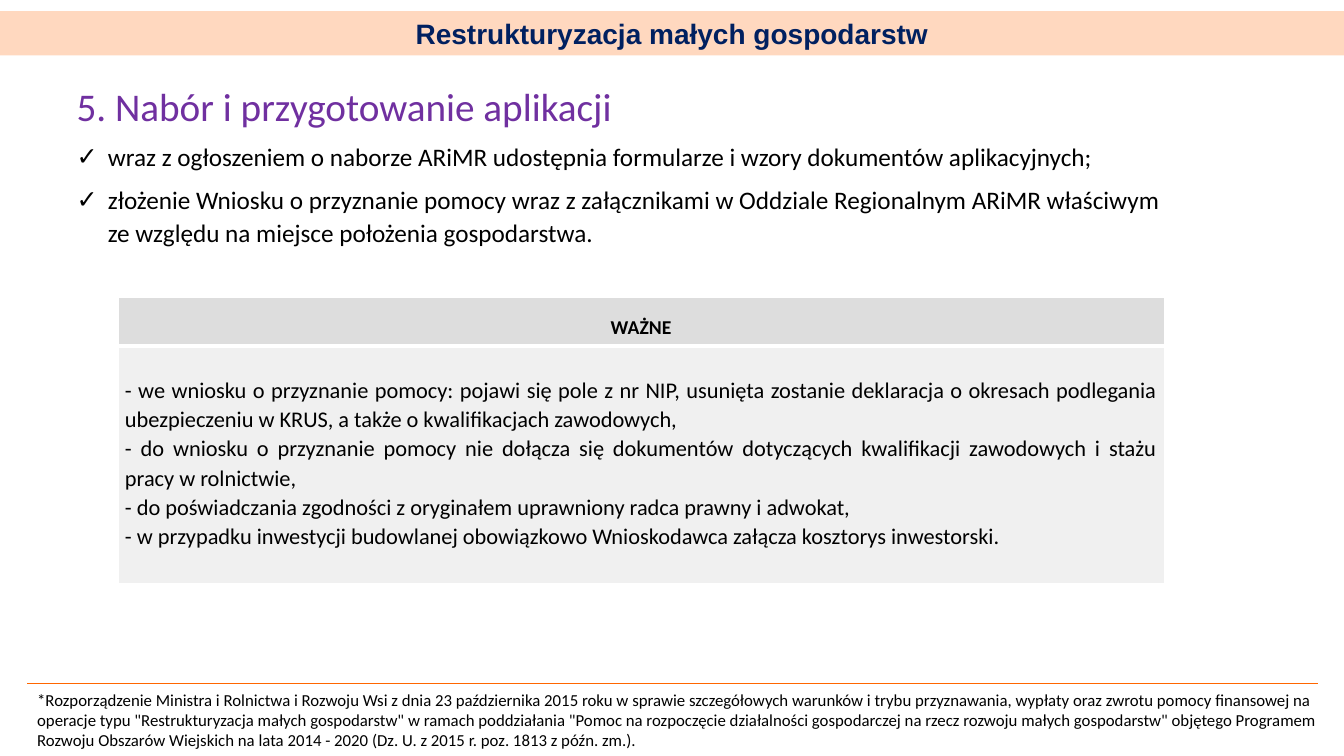
from dataclasses import dataclass

import lxml.etree
import pptx
import pptx.dml.color
import pptx.enum.shapes
import pptx.enum.text
import pptx.oxml.ns
import pptx.util

RGBColor = pptx.dml.color.RGBColor
ALIGN = pptx.enum.text.PP_ALIGN
ANCHOR = pptx.enum.text.MSO_ANCHOR
AUTO_SIZE = pptx.enum.text.MSO_AUTO_SIZE
Pt = pptx.util.Pt

BLACK = RGBColor(0x00, 0x00, 0x00)
WHITE = RGBColor(0xFF, 0xFF, 0xFF)
NAVY = RGBColor(0x00, 0x20, 0x60)
PURPLE = RGBColor(0x70, 0x30, 0xA0)
ORANGE = RGBColor(0xFF, 0x66, 0x00)
HEADER_GREY = RGBColor(0xDD, 0xDD, 0xDD)
BODY_GREY = RGBColor(0xF0, 0xF0, 0xF0)

# The slide is a grid of square cells, twelve to the inch.
CELL = pptx.util.Inches(1) / 12
COLUMNS, ROWS = 160, 90
BULLET_INDENT = 3.72


@dataclass(frozen=True)
class Area:
    """A rectangle in grid columns and rows."""
    left: float
    top: float
    width: float
    height: float

    def emu(self) -> tuple:
        return tuple(grid(n) for n in (self.left, self.top, self.width, self.height))


@dataclass(frozen=True)
class TextStyle:
    size: float
    color: RGBColor = BLACK
    font: str = "Calibri"
    bold: bool = False
    align: ALIGN = ALIGN.LEFT
    line_spacing: float = 1.0
    space_after: float = 0


@dataclass(frozen=True)
class NoteRow:
    """One row of the note table; borders are left, right, top, bottom in points."""
    height: float
    fill: RGBColor
    style: TextStyle
    anchor: ANCHOR
    margin_top: float
    borders: tuple
    texts: tuple


BANNER = Area(0, 1.32, COLUMNS, 5.28)
HEADING = Area(7.92, 8.76, 66.84, 6.96)
STEPS = Area(7.92, 15.96, 132.48, 14.28)
NOTE = Area(14.04, 35.4, 124.56, 34.08)
FOOTNOTE = Area(3.24, 81.48, COLUMNS - 3.24, 8.52)
RULE_LEFT, RULE_RIGHT, RULE_ROW = 3.24, 156.96, 81.36

BANNER_STYLE = TextStyle(20, NAVY, "Arial", True, ALIGN.CENTER)
HEADING_STYLE = TextStyle(28, PURPLE, line_spacing=1.07, space_after=8)
STEP_STYLE = TextStyle(18, line_spacing=1.07, space_after=8)
FOOTNOTE_STYLE = TextStyle(12)

STEP_TEXTS = (
    "wraz z ogłoszeniem o naborze ARiMR udostępnia formularze i wzory dokumentów aplikacyjnych;",
    "złożenie Wniosku o przyznanie pomocy wraz z załącznikami w Oddziale Regionalnym ARiMR "
    "właściwym ze względu na miejsce położenia gospodarstwa.",
)
NOTE_ROWS = (
    NoteRow(5.76, HEADER_GREY, TextStyle(14, bold=True, align=ALIGN.CENTER, line_spacing=1.5),
            ANCHOR.MIDDLE, 0, (1, 1, 1, 3), ("WAŻNE",)),
    NoteRow(28.32, BODY_GREY, TextStyle(16, align=ALIGN.JUSTIFY, line_spacing=1.07),
            ANCHOR.TOP, 3.48, (1, 1, 3, 1), (
                "- we wniosku o przyznanie pomocy: pojawi się pole z nr NIP, usunięta zostanie "
                "deklaracja o okresach podlegania ubezpieczeniu w KRUS, a także o kwalifikacjach "
                "zawodowych,",
                "- do wniosku o przyznanie pomocy nie dołącza się dokumentów dotyczących "
                "kwalifikacji zawodowych i stażu pracy w rolnictwie,",
                "- do poświadczania zgodności z oryginałem uprawniony radca prawny i adwokat,",
                "- w przypadku inwestycji budowlanej obowiązkowo Wnioskodawca załącza kosztorys "
                "inwestorski.",
            )),
)
FOOTNOTE_TEXT = (
    "*Rozporządzenie Ministra i Rolnictwa i Rozwoju Wsi z dnia 23 października 2015 roku w sprawie "
    "szczegółowych warunków i trybu przyznawania, wypłaty oraz zwrotu pomocy finansowej na operacje "
    'typu "Restrukturyzacja małych gospodarstw" w ramach poddziałania "Pomoc na rozpoczęcie '
    'działalności gospodarczej na rzecz rozwoju małych gospodarstw" objętego Programem Rozwoju '
    "Obszarów Wiejskich na lata 2014 - 2020 (Dz. U. z 2015 r. poz. 1813 z późn. zm.)."
)


def grid(count: float) -> int:
    return round(count * CELL)


def add_element(parent, tag: str, **attributes: str):
    return lxml.etree.SubElement(parent, pptx.oxml.ns.qn(tag), attributes)


def add_check_bullet(para) -> None:
    properties = para._p.get_or_add_pPr()
    properties.set("marL", str(grid(BULLET_INDENT)))
    properties.set("indent", str(-grid(BULLET_INDENT)))
    add_element(properties, "a:buFont", typeface="Arial")
    add_element(properties, "a:buChar", char="✓")


def write(frame, texts: tuple, style: TextStyle, checked: bool = False) -> None:
    for index, text in enumerate(texts):
        para = frame.add_paragraph() if index else frame.paragraphs[0]
        if checked:
            add_check_bullet(para)
        para.alignment = style.align
        para.line_spacing = style.line_spacing
        para.space_before = Pt(0)
        para.space_after = Pt(style.space_after)
        span = para.add_run()
        span.text = text
        span.font.name = style.font
        span.font.size = Pt(style.size)
        span.font.bold = style.bold
        span.font.color.rgb = style.color


def fit_box(box, area: Area, anchor: ANCHOR = ANCHOR.TOP, wrap: bool = True) -> None:
    box.left, box.top, box.width, box.height = area.emu()
    frame = box.text_frame
    frame.word_wrap = wrap
    frame.auto_size = AUTO_SIZE.SHAPE_TO_FIT_TEXT
    frame.vertical_anchor = anchor


def add_banner(slide) -> None:
    banner = slide.shapes.add_shape(pptx.enum.shapes.MSO_SHAPE.RECTANGLE, *BANNER.emu())
    banner.shadow.inherit = False
    banner.fill.solid()
    banner.fill.fore_color.rgb = ORANGE
    color = banner._element.spPr.find(".//" + pptx.oxml.ns.qn("a:srgbClr"))
    add_element(color, "a:alpha", val="25000")
    banner.line.fill.background()
    fit_box(banner, BANNER)
    write(banner.text_frame, ("Restrukturyzacja małych gospodarstw",), BANNER_STYLE)


def set_borders(cell, widths: tuple) -> None:
    properties = cell._tc.get_or_add_tcPr()
    for side, width in zip("LRTB", widths):
        border = add_element(properties, f"a:ln{side}", w=str(Pt(width)))
        add_element(add_element(border, "a:solidFill"), "a:srgbClr", val=str(WHITE))


def add_note(slide) -> None:
    table = slide.shapes.add_table(len(NOTE_ROWS), 1, *NOTE.emu()).table
    table.first_row = table.horz_banding = False
    for index, row in enumerate(NOTE_ROWS):
        table.rows[index].height = grid(row.height)
        cell = table.cell(index, 0)
        set_borders(cell, row.borders)
        cell.fill.solid()
        cell.fill.fore_color.rgb = row.fill
        cell.vertical_anchor = row.anchor
        cell.margin_left = cell.margin_right = grid(0.84)
        cell.margin_top, cell.margin_bottom = grid(row.margin_top), 0
        write(cell.text_frame, row.texts, row.style)


def add_rule(slide) -> None:
    rule = slide.shapes.add_connector(
        pptx.enum.shapes.MSO_CONNECTOR.STRAIGHT,
        grid(RULE_LEFT), grid(RULE_ROW), grid(RULE_RIGHT), grid(RULE_ROW))
    rule.line.color.rgb = ORANGE
    rule.line.width = Pt(1)
    add_element(rule._element.spPr, "a:effectLst")


def main() -> None:
    deck = pptx.Presentation()
    deck.slide_width, deck.slide_height = grid(COLUMNS), grid(ROWS)
    slide = deck.slides.add_slide(deck.slide_layouts[1])

    heading, steps = slide.shapes.title, slide.placeholders[1]
    fit_box(heading, HEADING, wrap=False)
    write(heading.text_frame, ("5. Nabór i przygotowanie aplikacji",), HEADING_STYLE)
    fit_box(steps, STEPS)
    write(steps.text_frame, STEP_TEXTS, STEP_STYLE, checked=True)

    add_note(slide)
    add_banner(slide)
    add_rule(slide)
    footnote = slide.shapes.add_textbox(*FOOTNOTE.emu())
    fit_box(footnote, FOOTNOTE)
    write(footnote.text_frame, (FOOTNOTE_TEXT,), FOOTNOTE_STYLE)
    deck.save("out.pptx")


if __name__ == "__main__":
    main()
